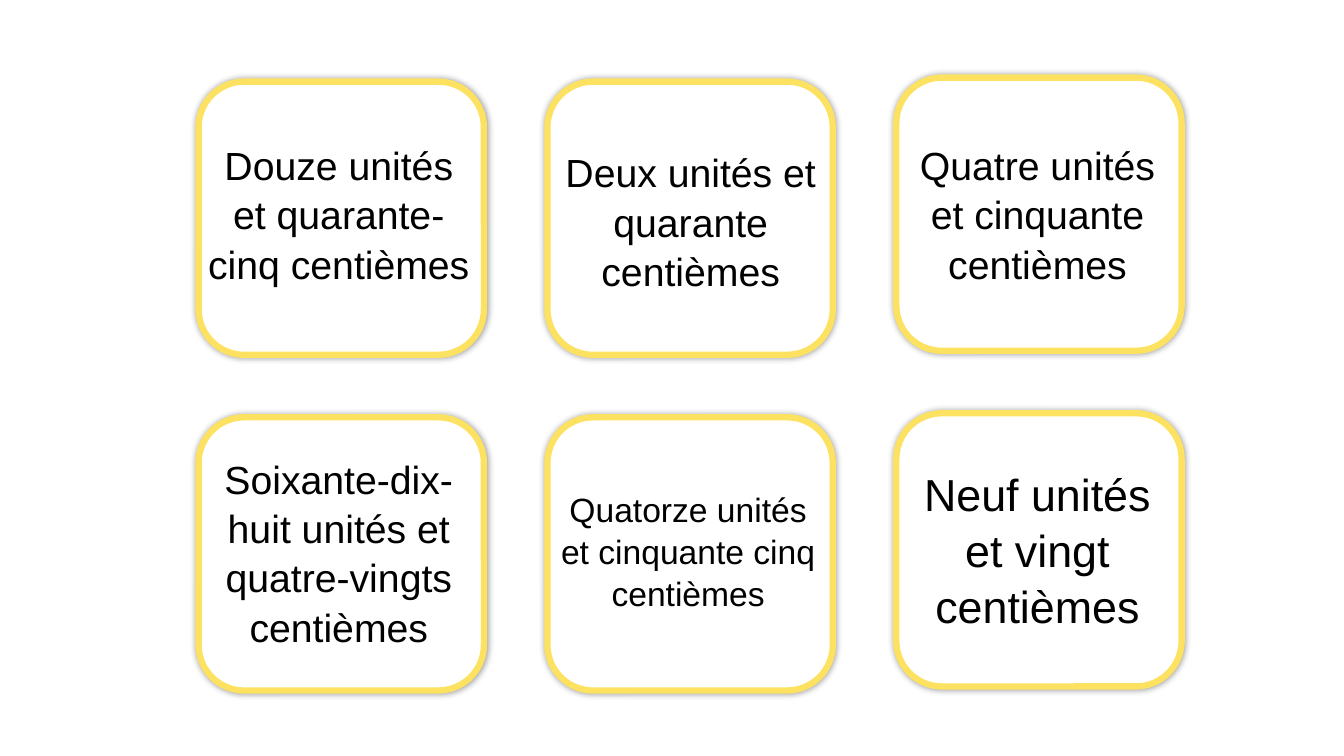
"""Build a slide of six rounded cards naming decimal numbers in French words."""
import dataclasses

import lxml.etree
import pptx
import pptx.dml.color
import pptx.enum.shapes
import pptx.enum.text
import pptx.oxml.ns
import pptx.util

EMU_PER_PX = 9144
SLIDE_W, SLIDE_H = 1333, 750
CARD_W, CARD_H = 283, 271
LEFT, TOP = 197, 81
COLUMN_STEP, ROW_STEP = 346, 333
COLUMN_SHIFTS = (0, 0, -4)


@dataclasses.dataclass(frozen=True)
class Theme:
    font: str = "Arial"
    ink: str = "000000"
    paper: str = "FFFFFF"
    border: str = "FDE261"
    border_pt: float = 4.5
    shadow_blur_pt: int = 5
    shadow_alpha: int = 40
    small: int = 24
    medium: int = 28
    large: int = 32
    line_spacing: float = 1.05


@dataclasses.dataclass(frozen=True)
class Card:
    text: str
    size: int
    text_box: tuple[int, int, int, int]


THEME = Theme()
CARDS = (
    Card("Douze unités et quarante-cinq centièmes", THEME.medium, (193, 133, 286, 151)),
    Card("Deux unités et quarante centièmes", THEME.medium, (536, 140, 298, 151)),
    Card("Quatre unités et cinquante centièmes", THEME.medium, (886, 133, 286, 151)),
    Card("Soixante-dix-huit unités et quatre-vingts centièmes", THEME.medium, (191, 444, 290, 199)),
    Card("Quatorze unités et cinquante cinq centièmes", THEME.small, (541, 478, 283, 131)),
    Card("Neuf unités et vingt centièmes", THEME.large, (895, 455, 268, 172)),
)


def px(n: int) -> pptx.util.Emu:
    """Turn px into EMU."""
    return pptx.util.Emu(n * EMU_PER_PX)


def rgb(value: str) -> pptx.dml.color.RGBColor:
    """Turn a hex string into a colour."""
    return pptx.dml.color.RGBColor.from_string(value)


def add_glow_shadow(sp) -> None:
    """Give a shape a soft shadow on all sides."""
    sp.shadow.inherit = False
    qn = pptx.oxml.ns.qn
    effects = sp.element.spPr.find(qn("a:effectLst"))
    shadow = lxml.etree.SubElement(
        effects, qn("a:outerShdw"), blurRad=str(pptx.util.Pt(THEME.shadow_blur_pt)),
        dist="0", dir="0", algn="ctr", rotWithShape="0")
    color = lxml.etree.SubElement(shadow, qn("a:srgbClr"), val=THEME.ink)
    lxml.etree.SubElement(color, qn("a:alpha"), val=str(THEME.shadow_alpha * 1000))


def add_frame(s, x: int, y: int) -> None:
    """Draw one rounded card outline."""
    sp = s.shapes.add_shape(
        pptx.enum.shapes.MSO_SHAPE.ROUNDED_RECTANGLE, px(x), px(y), px(CARD_W), px(CARD_H))
    sp.fill.solid()
    sp.fill.fore_color.rgb = rgb(THEME.paper)
    sp.line.color.rgb = rgb(THEME.border)
    sp.line.width = pptx.util.Pt(THEME.border_pt)
    add_glow_shadow(sp)


def add_text(s, text: str, box: tuple[int, int, int, int], *, size: int,
             color: str = THEME.ink, font: str = THEME.font) -> None:
    """Write centred wrapping text in a box."""
    tf = s.shapes.add_textbox(*map(px, box)).text_frame
    tf.word_wrap = True
    tf.auto_size = pptx.enum.text.MSO_AUTO_SIZE.SHAPE_TO_FIT_TEXT
    p = tf.paragraphs[0]
    p.alignment = pptx.enum.text.PP_ALIGN.CENTER
    p.line_spacing = THEME.line_spacing
    r = p.add_run()
    r.text = text
    r.font.name = font
    r.font.size = pptx.util.Pt(size)
    r.font.color.rgb = rgb(color)


def main() -> None:
    """Build and save the presentation."""
    prs = pptx.Presentation()
    prs.slide_width, prs.slide_height = px(SLIDE_W), px(SLIDE_H)
    s = prs.slides.add_slide(prs.slide_layouts[6])
    for i, card in enumerate(CARDS):
        row, column = divmod(i, len(COLUMN_SHIFTS))
        add_frame(s, LEFT + column * COLUMN_STEP, TOP + row * ROW_STEP + COLUMN_SHIFTS[column])
        add_text(s, card.text, card.text_box, size=card.size)
    prs.save("out.pptx")


if __name__ == "__main__":
    main()
